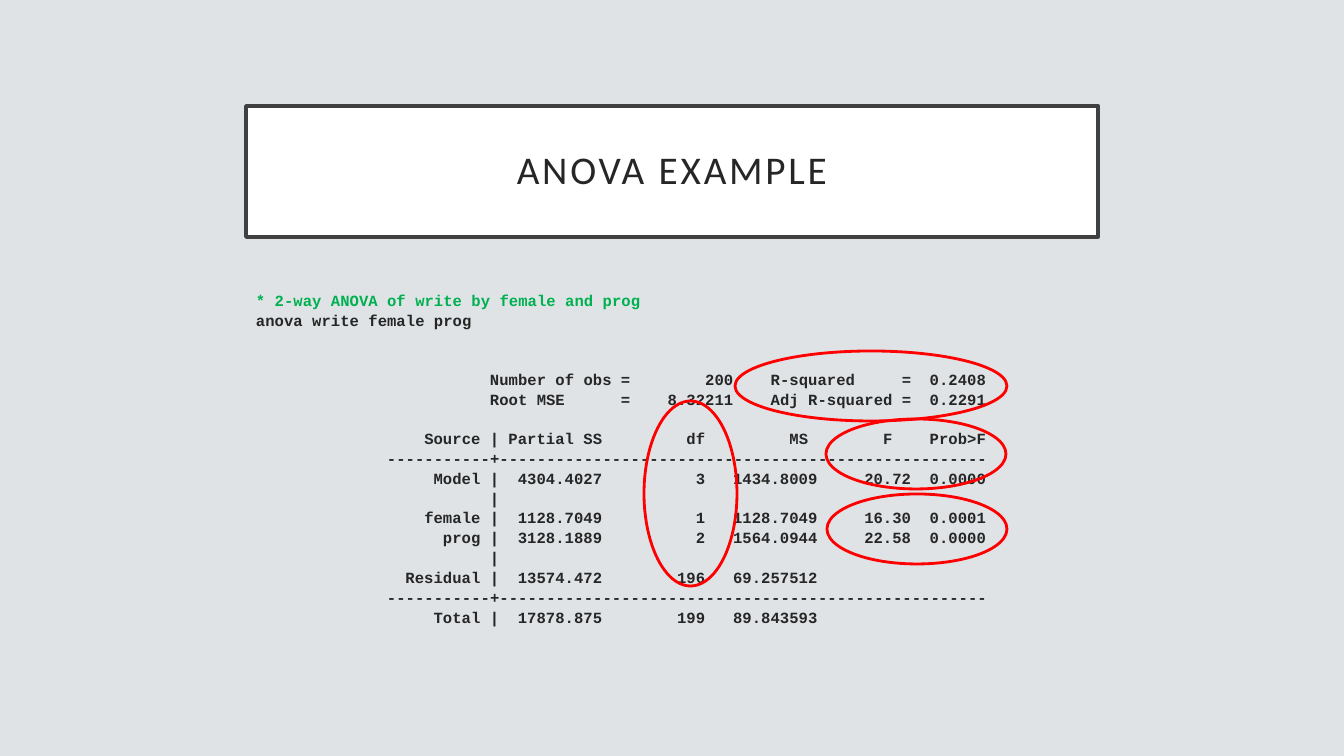
from pptx import Presentation
from pptx import util as u
from pptx.dml.color import RGBColor
from pptx.enum import shapes, text
from lxml import etree
from pptx.oxml import ns

PX = 914400 / 100.8
BACKGROUND = RGBColor(0xDF, 0xE3, 0xE5)
WHITE = RGBColor(0xFF, 0xFF, 0xFF)
FRAME = RGBColor(0x40, 0x40, 0x40)
INK = RGBColor(0x26, 0x26, 0x26)
GREEN = RGBColor(0x00, 0xB0, 0x50)
RED = RGBColor(0xFF, 0x00, 0x00)

CHARACTER = 9.36
LINE_PITCH = 13.66
ROW_SPACE = 3.6

CODE = []
FIT = [("l", 25), ("r", 40), ("r", 51), ("l", 55), ("r", 70), ("r", 78)]
HEADER = [("r", 26), ("r", 37), ("r", 48), ("r", 59), ("r", 68), ("r", 78)]
VALUES = [("r", 26), ("r", 37), ("r", 48), ("r", 60), ("r", 70), ("r", 78)]
RULE = [("l", 14)]
DASHES = "-" * 11 + "+" + "-" * 52

OUTPUT = [
    (CODE, 0, ["* 2-way ANOVA of write by female and prog"]),
    (CODE, 0, ["anova write female prog"]),
    (FIT, 2, ["", "Number of obs", "=", "200", "R-squared", "=", "0.2408"]),
    (FIT, 0, ["", "Root MSE", "=", "8.32211", "Adj R-squared", "=", "0.2291"]),
    (HEADER, 1, ["", "Source |", "Partial SS", "df", "MS", "F", "Prob>F"]),
    (RULE, 0, ["", DASHES]),
    (VALUES, 0, ["", "Model |", "4304.4027", "3", "1434.8009", "20.72", "0.0000"]),
    (VALUES, 0, ["", "|"]),
    (VALUES, 0, ["", "female |", "1128.7049", "1", "1128.7049", "16.30", "0.0001"]),
    (VALUES, 0, ["", "prog |", "3128.1889", "2", "1564.0944", "22.58", "0.0000"]),
    (VALUES, 0, ["", "|"]),
    (VALUES, 0, ["", "Residual |", "13574.472", "196", "69.257512"]),
    (RULE, 0, ["", DASHES]),
    (VALUES, 0, ["", "Total |", "17878.875", "199", "89.843593"]),
]

HIGHLIGHTS = [
    (826, 419, 180, 70),
    (827, 494, 180, 70),
    (644, 401, 93, 185),
    (735, 351, 272, 70),
]


def px(length):
    return u.Emu(round(length * PX))


def style(span, font, size, color, bold=False):
    span.font.name = font
    span.font.size = u.Pt(size)
    span.font.color.rgb = color
    span.font.bold = bold


def add_outline(page, kind, place, color, weight):
    shape = page.shapes.add_shape(kind, *map(px, place))
    shape.shadow.inherit = False
    shape.fill.background()
    shape.line.color.rgb = color
    shape.line.width = u.Pt(weight)
    return shape


def add_title(page, wording):
    box = add_outline(page, shapes.MSO_SHAPE.RECTANGLE, (246, 106, 852, 131), FRAME, 2.5)
    box.fill.solid()
    box.fill.fore_color.rgb = WHITE
    frame = box.text_frame
    frame.text = wording
    frame.word_wrap = True
    frame.vertical_anchor = text.MSO_ANCHOR.MIDDLE
    frame.margin_left = frame.margin_right = px(20)
    frame.margin_top = frame.margin_bottom = px(20)
    para = frame.paragraphs[0]
    para.alignment = text.PP_ALIGN.CENTER
    para.line_spacing = 0.9
    span = para.runs[0]
    style(span, "Calibri", 28, INK)
    span.font._element.set("spc", "200")


def set_tabs(para, stops):
    tabs = etree.SubElement(para._p.get_or_add_pPr(), ns.qn("a:tabLst"))
    for side, column in stops:
        tab = etree.SubElement(tabs, ns.qn("a:tab"))
        tab.set("pos", str(px(column * CHARACTER)))
        tab.set("algn", side)


def add_output(page, rows):
    box = page.shapes.add_textbox(*map(px, (246, 290, 852, 342)))
    frame = box.text_frame
    frame.word_wrap = True
    for number, (stops, gap, cells) in enumerate(rows):
        para = frame.add_paragraph() if number else frame.paragraphs[0]
        para.text = "\t".join(cells)
        para.line_spacing = 0.8
        para.space_before = u.Pt(round(ROW_SPACE + gap * LINE_PITCH, 2))
        if stops:
            set_tabs(para, stops)
        color = INK if number else GREEN
        style(para.runs[0], "Courier New", 11.1, color, bold=True)


def main():
    deck = Presentation()
    deck.slide_width = px(1344)
    deck.slide_height = px(756)
    page = deck.slides.add_slide(deck.slide_layouts[6])
    page.background.fill.solid()
    page.background.fill.fore_color.rgb = BACKGROUND
    add_title(page, "ANOVA EXAMPLE")
    add_output(page, OUTPUT)
    for place in HIGHLIGHTS:
        add_outline(page, shapes.MSO_SHAPE.OVAL, place, RED, 2)
    deck.save("out.pptx")


if __name__ == "__main__":
    main()
